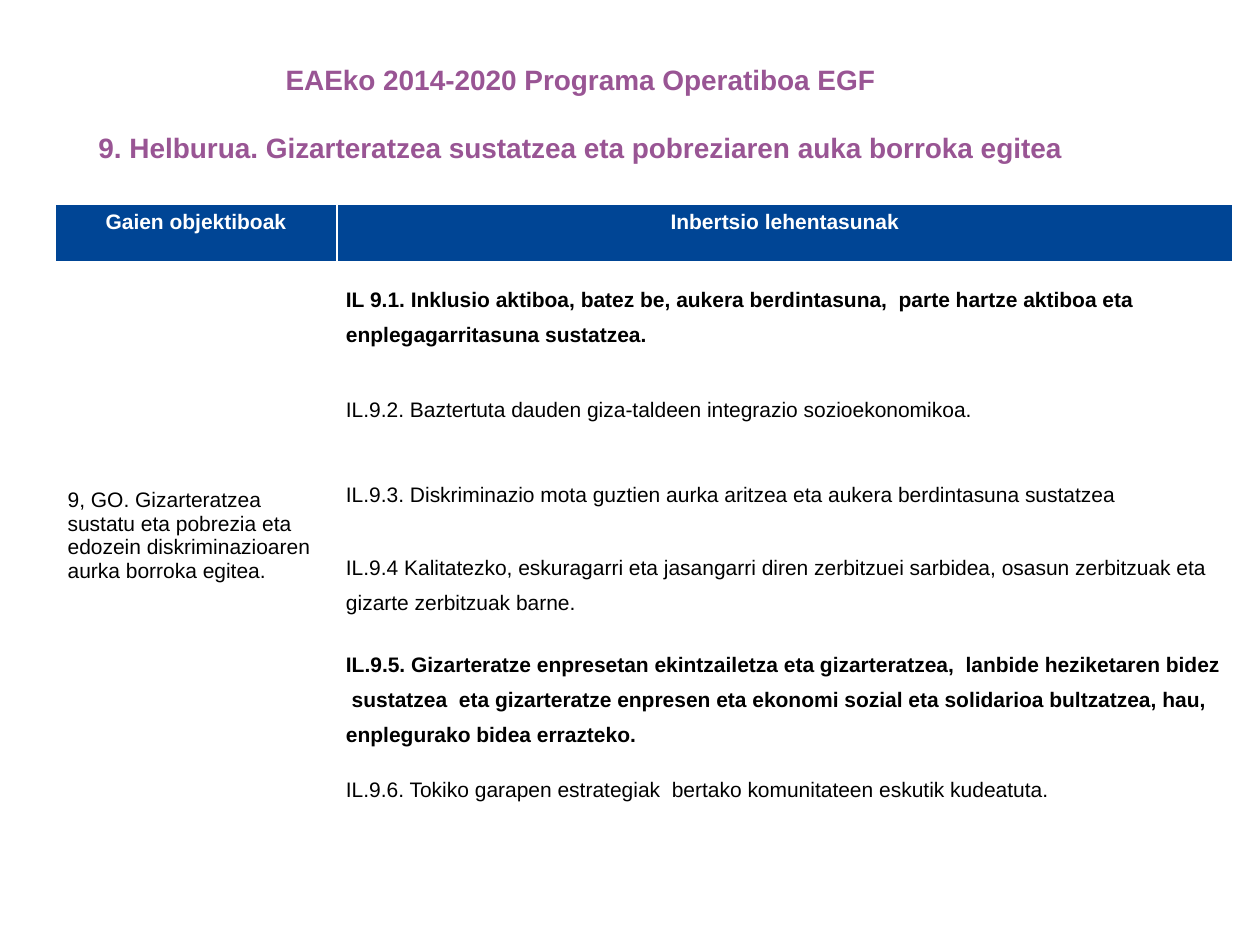
from dataclasses import dataclass

from lxml import etree
from pptx import Presentation
from pptx.dml.color import RGBColor
from pptx.enum.text import MSO_ANCHOR, MSO_AUTO_SIZE, PP_ALIGN
from pptx.oxml.ns import qn
from pptx.util import Pt

TOP = MSO_ANCHOR.TOP
MIDDLE = MSO_ANCHOR.MIDDLE
CENTER = PP_ALIGN.CENTER
LEFT = PP_ALIGN.LEFT
NO_AUTOFIT = MSO_AUTO_SIZE.NONE
PX = 914400 // 126


@dataclass(frozen=True)
class Theme:
    font: str = "Arial"
    title_size: int = 16
    table_size: int = 12
    title: str = "995594"
    header: str = "004595"
    white: str = "FFFFFF"
    black: str = "000000"


theme = Theme()


def format_paragraph(paragraph, size, color, bold, alignment):
    paragraph.alignment = alignment
    for run in paragraph.runs:
        run.font.name = theme.font
        run.font.size = Pt(size)
        run.font.bold = bold
        run.font.color.rgb = RGBColor.from_string(color)


def set_borders(cell, widths):
    properties = cell._tc.get_or_add_tcPr()
    for side, width in zip(("lnL", "lnR", "lnT", "lnB"), widths):
        line = etree.SubElement(properties, qn(f"a:{side}"), w=str(Pt(width)))
        fill = etree.SubElement(line, qn("a:solidFill"))
        etree.SubElement(fill, qn("a:srgbClr"), val=theme.white)


presentation = Presentation()
presentation.slide_width = 1260 * PX
presentation.slide_height = 945 * PX
slide = presentation.slides.add_slide(presentation.slide_layouts[5])

title = slide.shapes.title
title.left, title.top, title.width, title.height = 84 * PX, 56 * PX, 993 * PX, 115 * PX
title_frame = title.text_frame
title_frame.text = (
    "EAEko 2014-2020 Programa Operatiboa EGF\n"
    "9. Helburua. Gizarteratzea sustatzea eta pobreziaren auka borroka egitea"
)
title_frame.word_wrap = True
title_frame.auto_size = NO_AUTOFIT
title_frame.vertical_anchor = TOP
for paragraph in title_frame.paragraphs:
    format_paragraph(paragraph, theme.title_size, theme.title, True, CENTER)
title_frame.paragraphs[1].space_before = Pt(20)

headers = ["Gaien objektiboak", "Inbertsio lehentasunak"]
objective = "9, GO. Gizarteratzea sustatu eta pobrezia eta edozein diskriminazioaren aurka borroka egitea."
priorities = [
    ("IL 9.1. Inklusio aktiboa, batez be, aukera berdintasuna,  parte hartze aktiboa eta "
     "enplegagarritasuna sustatzea.", True),
    ("IL.9.2. Baztertuta dauden giza-taldeen integrazio sozioekonomikoa.", False),
    ("IL.9.3. Diskriminazio mota guztien aurka aritzea eta aukera berdintasuna sustatzea", False),
    ("IL.9.4 Kalitatezko, eskuragarri eta jasangarri diren zerbitzuei sarbidea, osasun zerbitzuak eta "
     "gizarte zerbitzuak barne.", False),
    ("IL.9.5. Gizarteratze enpresetan ekintzailetza eta gizarteratzea,  lanbide heziketaren bidez "
     " sustatzea  eta gizarteratze enpresen eta ekonomi sozial eta solidarioa bultzatzea, hau, "
     "enplegurako bidea errazteko.", True),
    ("IL.9.6. Tokiko garapen estrategiak  bertako komunitateen eskutik kudeatuta.", False),
]
column_widths = [282, 896]
row_heights = [59, 98, 86, 84, 98, 131, 49]

table = slide.shapes.add_table(
    len(row_heights), len(column_widths), 55 * PX, 204 * PX,
    sum(column_widths) * PX, sum(row_heights) * PX,
).table
for column, width in zip(table.columns, column_widths):
    column.width = width * PX
for row, height in zip(table.rows, row_heights):
    row.height = height * PX

for column_index, text in enumerate(headers):
    cell = table.cell(0, column_index)
    cell.text_frame.text = text
    format_paragraph(cell.text_frame.paragraphs[0], theme.table_size, theme.white, True, CENTER)
    set_borders(cell, (1, 1, 1, 3))
    cell.fill.solid()
    cell.fill.fore_color.rgb = RGBColor.from_string(theme.header)

for row_index, (text, bold) in enumerate(priorities, start=1):
    top_width = 3 if row_index == 1 else 1
    side_cell = table.cell(row_index, 0)
    set_borders(side_cell, (1, 1, top_width, 1))
    side_cell.fill.background()

    cell = table.cell(row_index, 1)
    cell.text_frame.text = text
    cell.vertical_anchor = MIDDLE
    cell.margin_left = cell.margin_right = 9 * PX
    cell.margin_top = cell.margin_bottom = 0
    paragraph = cell.text_frame.paragraphs[0]
    format_paragraph(paragraph, theme.table_size, theme.black, bold, LEFT)
    paragraph.line_spacing = 1.5
    paragraph.space_before = Pt(0)
    paragraph.space_after = Pt(12)
    set_borders(cell, (1, 1, top_width, 1))
    cell.fill.solid()
    cell.fill.fore_color.rgb = RGBColor.from_string(theme.white)

objective_cell = table.cell(1, 0)
objective_cell.merge(table.cell(len(priorities), 0))
objective_cell.text_frame.text = objective
objective_cell.vertical_anchor = MIDDLE
format_paragraph(objective_cell.text_frame.paragraphs[0], theme.table_size, theme.black, False, LEFT)

presentation.save("out.pptx")
